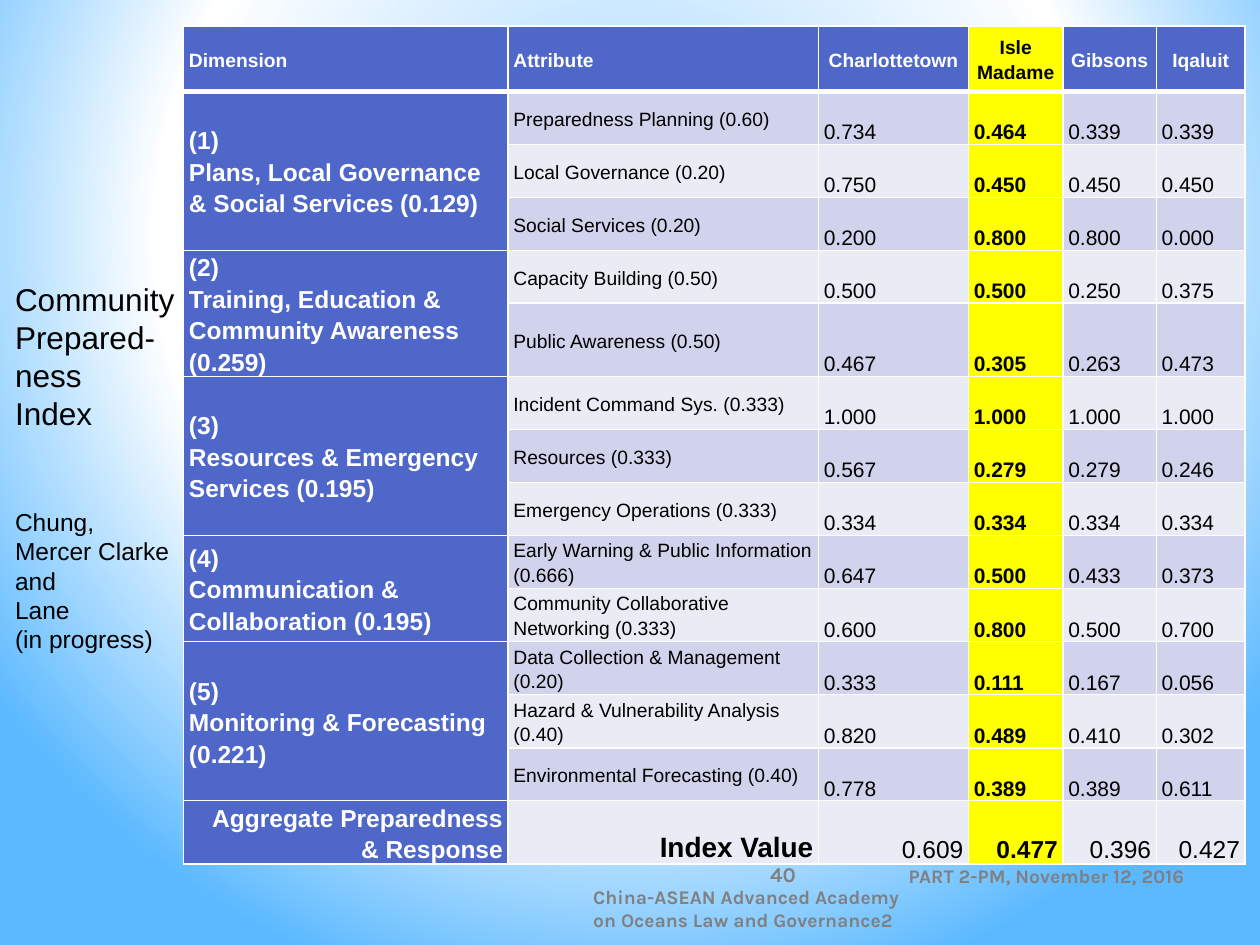
import pptx
import pptx.dml.color
import pptx.enum.text
import pptx.oxml
import pptx.oxml.ns
import pptx.util

Pt = pptx.util.Pt
ALIGN = pptx.enum.text.PP_ALIGN
ANCHOR = pptx.enum.text.MSO_ANCHOR
COLORS = {
    "header": "4E67C8", "highlight": "FFFF00", "band_dark": "D0D3EB",
    "band_light": "E9EBF5", "white": "FFFFFF", "black": "000000",
    "footer": "808080", "sky_center": "9ED5FF", "sky_edge": "5BB9FF",
}
NAMESPACE = pptx.oxml.ns.nsdecls("a", "p")

COLUMN_WIDTHS = [185.4, 177.4, 85.7, 54, 53.3, 50.8]
HEADER_HEIGHT, ROW_HEIGHT, TOTAL_HEIGHT = 37.2, 30.3, 33.1
LINE_SPACING, DIMENSION_SPACING = 1.15, Pt(18)
HIGHLIGHT_COLUMN = 3
HEADINGS = ["Dimension", "Attribute", "Charlottetown", "Isle\nMadame", "Gibsons", "Iqaluit"]
DIMENSIONS = [
    ("(1)\nPlans, Local Governance & Social Services (0.129)", [
        ("Preparedness Planning (0.60)", "0.734", "0.464", "0.339", "0.339"),
        ("Local Governance (0.20)", "0.750", "0.450", "0.450", "0.450"),
        ("Social Services (0.20)", "0.200", "0.800", "0.800", "0.000")]),
    ("(2)\nTraining, Education & Community Awareness (0.259)", [
        ("Capacity Building (0.50)", "0.500", "0.500", "0.250", "0.375"),
        ("Public Awareness (0.50)", "0.467", "0.305", "0.263", "0.473")]),
    ("(3)\nResources & Emergency Services (0.195)", [
        ("Incident Command Sys. (0.333)", "1.000", "1.000", "1.000", "1.000"),
        ("Resources (0.333)", "0.567", "0.279", "0.279", "0.246"),
        ("Emergency Operations (0.333)", "0.334", "0.334", "0.334", "0.334")]),
    ("(4)\nCommunication & Collaboration (0.195)", [
        ("Early Warning & Public Information (0.666)", "0.647", "0.500", "0.433", "0.373"),
        ("Community Collaborative Networking (0.333)", "0.600", "0.800", "0.500", "0.700")]),
    ("(5)\nMonitoring & Forecasting (0.221)", [
        ("Data Collection & Management (0.20)", "0.333", "0.111", "0.167", "0.056"),
        ("Hazard & Vulnerability Analysis (0.40)", "0.820", "0.489", "0.410", "0.302"),
        ("Environmental Forecasting (0.40)", "0.778", "0.389", "0.389", "0.611")]),
]
TOTALS = ["0.609", "0.477", "0.396", "0.427"]


def rgb(name):
    return pptx.dml.color.RGBColor.from_string(COLORS[name])


def write_lines(frame, lines, size, color, bold=False, align=ALIGN.LEFT,
                font="Arial", spacing=None):
    """Write one paragraph per line, using the empty first paragraph if there is one."""
    for line in lines:
        first = frame.paragraphs[0]
        paragraph = frame.add_paragraph() if first.runs else first
        paragraph.alignment = align
        if spacing:
            paragraph.line_spacing = spacing
        run = paragraph.add_run()
        run.text = line
        run.font.name = font
        run.font.size = Pt(size)
        run.font.bold = bold
        run.font.color.rgb = rgb(color)


def set_background(slide):
    stops = [(0, "sky_center"), (60, "white"), (100, "sky_edge")]
    stops_xml = "".join(
        f'<a:gs pos="{position * 1000}"><a:srgbClr val="{COLORS[name]}"/></a:gs>'
        for position, name in stops)
    background = pptx.oxml.parse_xml(
        f'<p:bg {NAMESPACE}><p:bgPr><a:gradFill rotWithShape="1"><a:gsLst>{stops_xml}</a:gsLst>'
        '<a:path path="circle"><a:fillToRect l="20000" t="10000" r="20000" b="60000"/></a:path>'
        '</a:gradFill><a:effectLst/></p:bgPr></p:bg>')
    slide.element.find(pptx.oxml.ns.qn("p:cSld")).insert(0, background)


def style_cell(cell, row, column):
    if column == HIGHLIGHT_COLUMN:
        fill = "highlight"
    elif row == 0 or column == 0:
        fill = "header"
    else:
        fill = "band_dark" if row % 2 else "band_light"
    cell.fill.solid()
    cell.fill.fore_color.rgb = rgb(fill)
    cell.margin_left = cell.margin_right = Pt(3)
    cell.margin_top = cell.margin_bottom = 0
    widths = {"L": 1, "R": 1, "T": 3 if row == 1 else 1, "B": 3 if row == 0 else 1}
    properties = cell._tc.get_or_add_tcPr()
    for index, (side, width) in enumerate(widths.items()):
        properties.insert(index, pptx.oxml.parse_xml(
            f'<a:ln{side} {NAMESPACE} w="{Pt(width)}"><a:solidFill>'
            f'<a:srgbClr val="{COLORS["white"]}"/></a:solidFill></a:ln{side}>'))


def add_index_table(slide, left, top):
    heights = [HEADER_HEIGHT] + [ROW_HEIGHT] * sum(len(rows) for _, rows in DIMENSIONS)
    heights.append(TOTAL_HEIGHT)
    table = slide.shapes.add_table(
        len(heights), len(COLUMN_WIDTHS), Pt(left), Pt(top),
        Pt(sum(COLUMN_WIDTHS)), Pt(sum(heights))).table
    table.horz_banding = False
    for column, width in zip(table.columns, COLUMN_WIDTHS):
        column.width = Pt(width)
    for row, height in zip(table.rows, heights):
        row.height = Pt(height)
    for row in range(len(heights)):
        for column in range(len(COLUMN_WIDTHS)):
            style_cell(table.cell(row, column), row, column)

    def fill_cell(row, column, text, size, color="black", bold=False,
                  align=ALIGN.LEFT, anchor=ANCHOR.MIDDLE, spacing=LINE_SPACING):
        cell = table.cell(row, column)
        cell.vertical_anchor = anchor
        write_lines(cell.text_frame, text.split("\n"), size, color, bold, align,
                    spacing=spacing)

    def fill_dimension(row, text, align=ALIGN.LEFT):
        fill_cell(row, 0, text, 14, "white", True, align, spacing=DIMENSION_SPACING)

    def fill_scores(row, scores, size, align=ALIGN.LEFT):
        for column, score in enumerate(scores, start=2):
            fill_cell(row, column, score, size, bold=column == HIGHLIGHT_COLUMN,
                      align=align, anchor=ANCHOR.BOTTOM)

    for column, heading in enumerate(HEADINGS):
        fill_cell(0, column, heading, 11, "black" if column == HIGHLIGHT_COLUMN else "white",
                  True, ALIGN.LEFT if column < 2 else ALIGN.CENTER)
    row = 1
    for dimension, attributes in DIMENSIONS:
        table.cell(row, 0).merge(table.cell(row + len(attributes) - 1, 0))
        fill_dimension(row, dimension)
        for attribute, *scores in attributes:
            fill_cell(row, 1, attribute, 11)
            fill_scores(row, scores, 12)
            row += 1
    fill_dimension(row, "Aggregate Preparedness & Response", ALIGN.RIGHT)
    fill_cell(row, 1, "Index Value", 16, "black", True, ALIGN.RIGHT, ANCHOR.BOTTOM)
    fill_scores(row, TOTALS, 14, ALIGN.RIGHT)


def place_title(slide, left, top, width, height):
    title = slide.shapes.title
    title.left, title.top, title.width, title.height = map(Pt, (left, top, width, height))
    frame = title.text_frame
    frame.word_wrap = False
    frame.auto_size = pptx.enum.text.MSO_AUTO_SIZE.SHAPE_TO_FIT_TEXT
    frame.vertical_anchor = ANCHOR.TOP
    heading = ["Community", "Prepared-", "ness", "Index"]
    write_lines(frame, heading, 18, "black")
    write_lines(frame, ["Chung,", "Mercer Clarke", "and", "Lane", "(in progress)"], 14, "black")
    frame.paragraphs[len(heading)].space_before = Pt(43)


def add_footer(slide, left, top):
    """Place date, venue and page number, offset from the corner of the footer area."""
    parts = [
        ("PART 2-PM, November 12, 2016", 154, 0.7, 198, 11, ALIGN.RIGHT),
        ("China-ASEAN Advanced Academy on Oceans Law and Governance2",
         0, 19.5, 198, 11, ALIGN.LEFT),
        ("40", 90.7, 0, 49.7, 12, ALIGN.CENTER),
    ]
    for text, x, y, width, size, align in parts:
        frame = slide.shapes.add_textbox(
            Pt(left + x), Pt(top + y), Pt(width), Pt(28.8)).text_frame
        frame.word_wrap = True
        frame.vertical_anchor = ANCHOR.MIDDLE
        write_lines(frame, [text], size, "footer", True, align, "Karla")


def main():
    presentation = pptx.Presentation()
    presentation.slide_width, presentation.slide_height = Pt(720), Pt(540)
    slide = presentation.slides.add_slide(presentation.slide_layouts[5])
    set_background(slide)
    add_footer(slide, 331.9, 485.3)
    add_index_table(slide, 105, 15)
    place_title(slide, 1.4, 156.6, 106.6, 223)
    presentation.save("out.pptx")


if __name__ == "__main__":
    main()
